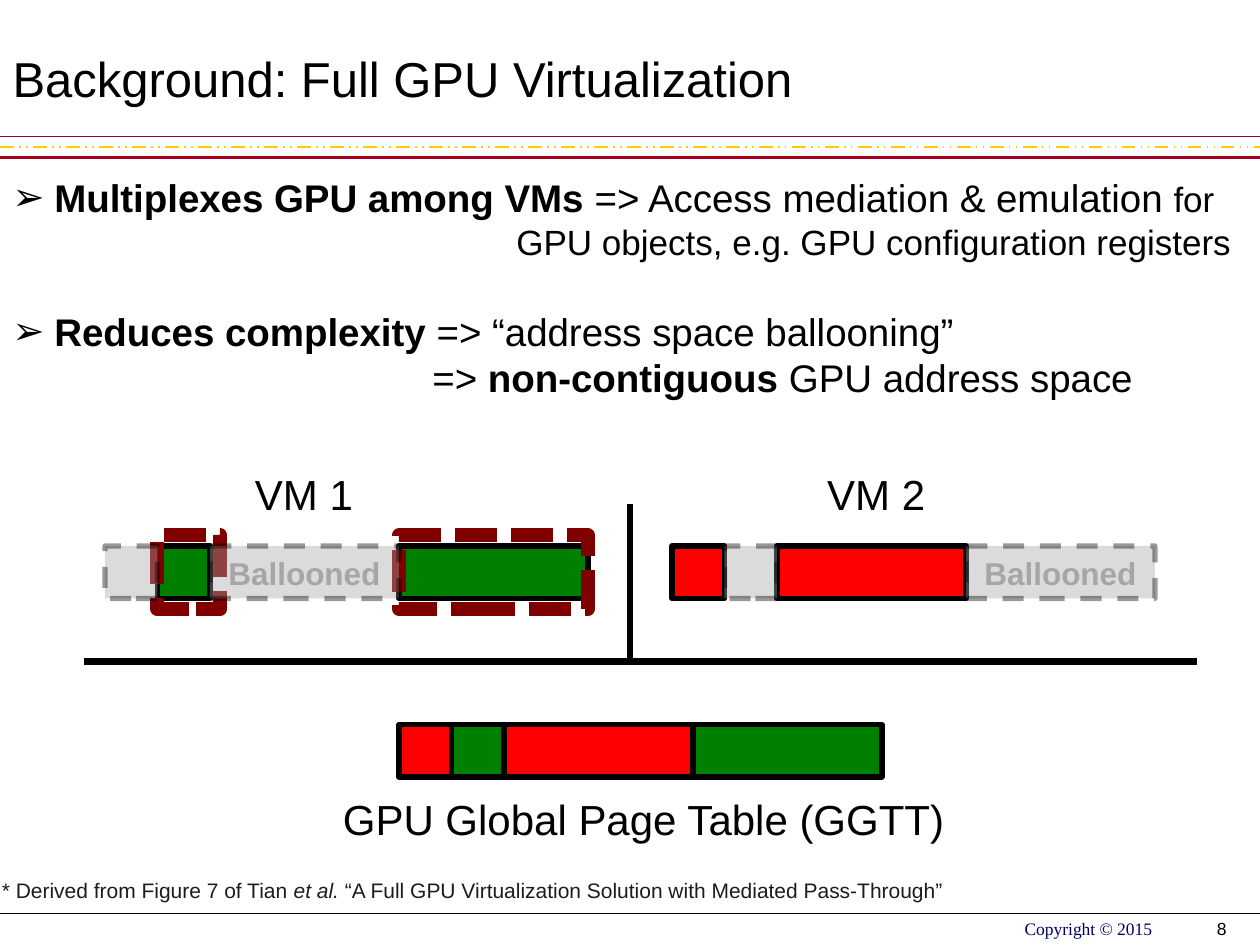
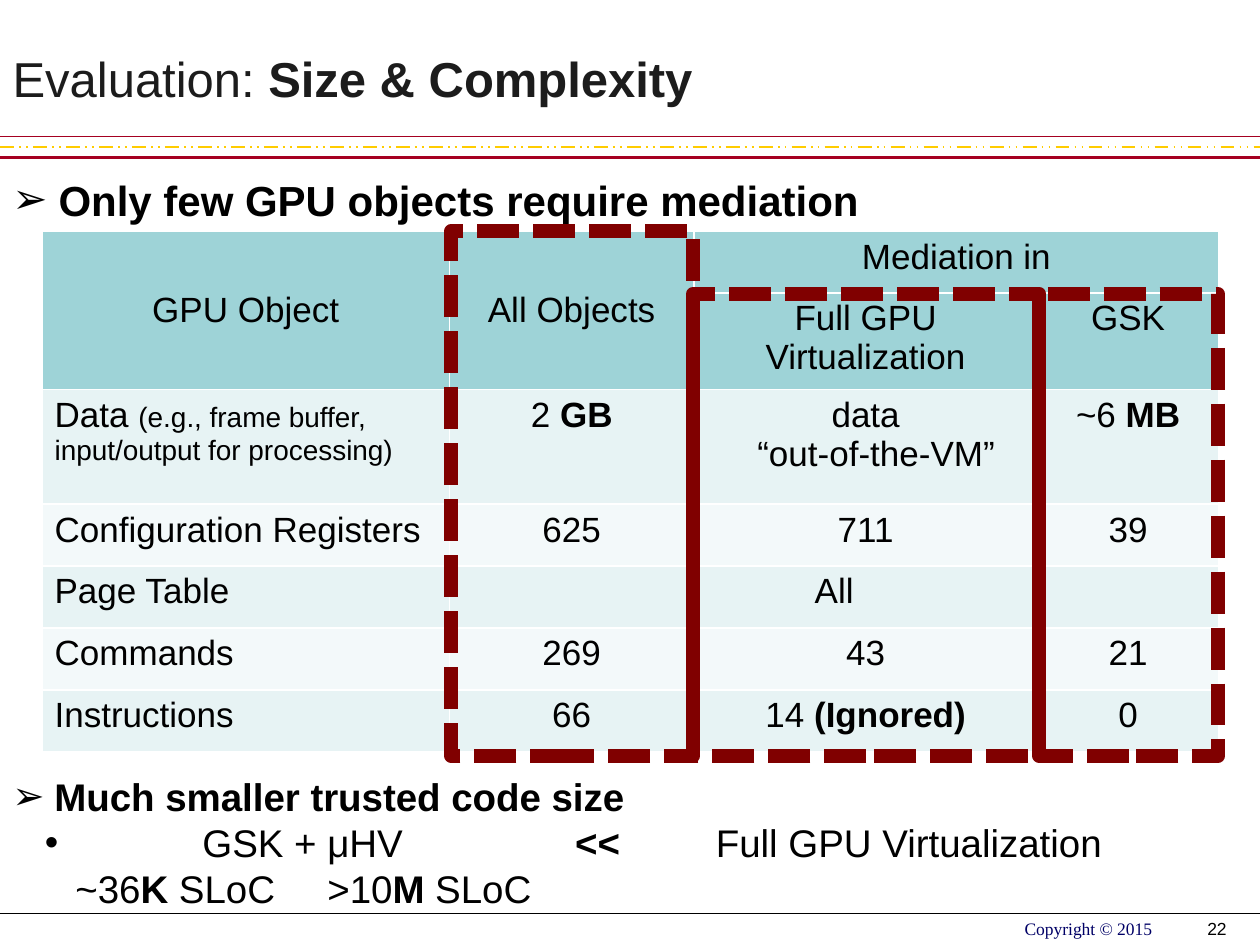
from itertools import accumulate

from lxml.etree import SubElement
from pptx import Presentation
from pptx.dml.color import RGBColor
from pptx.enum.dml import MSO_LINE_DASH_STYLE as Dash
from pptx.enum.shapes import MSO_CONNECTOR as Connector, MSO_SHAPE as Preset
from pptx.enum.text import MSO_ANCHOR as Anchor, MSO_AUTO_SIZE as AutoSize, PP_ALIGN as Align
from pptx.oxml.ns import qn
from pptx.util import Emu, Pt

PX = 7620  # 120 px to the inch
BLACK = RGBColor(0x00, 0x00, 0x00)
WHITE = RGBColor(0xFF, 0xFF, 0xFF)
INK = RGBColor(0x1C, 0x1C, 0x1C)
NAVY = RGBColor(0x00, 0x00, 0x66)
CRIMSON = RGBColor(0xA5, 0x00, 0x21)
GOLD = RGBColor(0xFF, 0xCC, 0x00)
MAROON = RGBColor(0x80, 0x00, 0x00)
RED = RGBColor(0xFF, 0x00, 0x00)
GREEN = RGBColor(0x00, 0x80, 0x00)
GRAY = RGBColor(0xA6, 0xA6, 0xA6)
HEADER = RGBColor(0x9E, 0xD3, 0xD7)
BANDS = RGBColor(0xE7, 0xF3, 0xF4), RGBColor(0xF3, 0xF9, 0xFA)

ARROW = "➢"
BOLD = {"bold": True}
SMALL_BLOCK, LARGE_BLOCK, BLOCK_HEIGHT = 50, 180, 50


def px(*lengths):
    return [Emu(length * PX) for length in lengths]


# Text
def write(frame, runs, size=20, color=BLACK, font="Arial", bold=False, align=Align.LEFT,
          bullet=None, margin=0, indent=0, tabs=(), before=0):
    """Fill the next paragraph; a run is a string or a (string, font settings) pair."""
    paragraph = frame.paragraphs[0]
    if paragraph.runs:
        paragraph = frame.add_paragraph()
    properties = paragraph._p.get_or_add_pPr()
    properties.set("marL", str(margin * PX))
    properties.set("indent", str(indent * PX))
    paragraph.alignment = align
    paragraph.space_before = Pt(before)
    if bullet:
        SubElement(properties, qn("a:buFont"), typeface="Arial")
        SubElement(properties, qn("a:buChar"), char=bullet)
    else:
        SubElement(properties, qn("a:buNone"))
    if tabs:
        stops = SubElement(properties, qn("a:tabLst"))
        for stop in tabs:
            SubElement(stops, qn("a:tab"), pos=str(stop * PX), algn="l")
    for item in [runs] if isinstance(runs, str) else runs:
        text, changes = (item, {}) if isinstance(item, str) else item
        run = paragraph.add_run()
        run.text = text
        run.font.name = font
        run.font.color.rgb = color
        run.font.size = Pt(changes.get("size", size))
        run.font.bold = changes.get("bold", bold)
        run.font.italic = changes.get("italic", False)


def add_text_frame(slide, box):
    frame = slide.shapes.add_textbox(*px(*box)).text_frame
    frame.word_wrap = True
    return frame


def add_label(slide, box, runs, **style):
    write(add_text_frame(slide, box), runs, **style)


# Lines and rectangles
def set_alpha(parent, percent):
    color = next(parent.iter(qn("a:srgbClr")))
    SubElement(color, qn("a:alpha"), val=str(percent * 1000))


def style_line(line, color, width, dash=None):
    line.color.rgb = color
    line.width = Pt(width)
    if dash:
        line.dash_style = dash


def add_line(slide, start, end, color, width, dash=None):
    line = slide.shapes.add_connector(Connector.STRAIGHT, *px(*start, *end))
    style_line(line.line, color, width, dash)
    SubElement(line._element.spPr, qn("a:effectLst"))


def add_rectangle(slide, box, fill=None, line=BLACK, width=3, dash=None, alpha=None):
    shape = slide.shapes.add_shape(Preset.RECTANGLE, *px(*box))
    style_line(shape.line, line, width, dash)
    outline = shape.line._get_or_add_ln()
    SubElement(outline, qn("a:round"))
    if fill is None:
        shape.fill.background()
    else:
        shape.fill.solid()
        shape.fill.fore_color.rgb = fill
    if alpha:
        set_alpha(shape._element.spPr.find(qn("a:solidFill")), alpha)
        set_alpha(outline, alpha)
    shape.shadow.inherit = False
    return shape


def add_highlight(slide, box):
    add_rectangle(slide, box, line=MAROON, width=8, dash=Dash.SQUARE_DOT)


# Shared frame of every slide
def add_framed_slide(presentation, title, number, title_color=BLACK):
    slide = presentation.slides.add_slide(presentation.slide_layouts[5])
    heading = slide.shapes.title
    heading.left, heading.top, heading.width, heading.height = px(0, 40, 1030, 68)
    frame = heading.text_frame
    frame.auto_size = AutoSize.NONE
    frame.vertical_anchor = Anchor.TOP
    write(frame, title, size=28, color=title_color)
    for y, color, width, dash in [(140, GOLD, 1, Dash.DASH_DOT_DOT),
                                  (130, CRIMSON, 0.75, None),
                                  (150, CRIMSON, 2.25, None),
                                  (870, BLACK, 0.5, None)]:
        add_line(slide, (0, y), (1200, y), color, width, dash)
    add_label(slide, (964, 868, 180, 32), "Copyright © 2015",
              size=10, color=NAVY, font="Times New Roman")
    add_label(slide, (900, 868, 280, 32), number, size=10, align=Align.RIGHT)
    return slide


# Memory bars
def add_memory_bar(slide, left, top, blocks):
    """Lay blocks side by side and return the boxes of the gray ones, drawn later."""
    gray_boxes = []
    for color, width in blocks:
        box = (left, top, width, BLOCK_HEIGHT)
        if color == GRAY:
            gray_boxes.append(box)
        else:
            add_rectangle(slide, box, color)
        left += width
    return gray_boxes


def add_ballooned(slide, box):
    shape = add_rectangle(slide, box, GRAY, dash=Dash.DASH, alpha=40)
    if box[2] == LARGE_BLOCK:
        shape.text_frame.word_wrap = True
        shape.text_frame.vertical_anchor = Anchor.BOTTOM
        write(shape.text_frame, "Ballooned", size=18, color=GRAY, bold=True, align=Align.CENTER)


def add_memory_diagram(slide, left, top):
    bar_top = top + 80
    gray_boxes = add_memory_bar(slide, left, bar_top, [
        (GRAY, SMALL_BLOCK), (GREEN, SMALL_BLOCK), (GRAY, LARGE_BLOCK), (GREEN, LARGE_BLOCK)])
    gray_boxes += add_memory_bar(slide, left + 540, bar_top, [
        (RED, SMALL_BLOCK), (GRAY, SMALL_BLOCK), (RED, LARGE_BLOCK), (GRAY, LARGE_BLOCK)])
    add_memory_bar(slide, left + 280, top + 250, [
        (RED, SMALL_BLOCK), (GREEN, SMALL_BLOCK), (RED, LARGE_BLOCK), (GREEN, LARGE_BLOCK)])
    for x, width, text in [(130, 119, "VM 1"), (675, 119, "VM 2")]:
        add_label(slide, (left + x, top, width, 60), text, size=24, align=Align.CENTER)
    add_label(slide, (left + 200, top + 310, 626, 60), "GPU Global Page Table (GGTT)",
              size=24, align=Align.CENTER)
    for x, width in [(50, 60), (280, 180)]:
        add_highlight(slide, (left + x, bar_top - 10, width, 70))
    add_line(slide, (left + 1040, top + 190), (left - 20, top + 190), BLACK, 4)
    add_line(slide, (left + 500, top + 40), (left + 500, top + 190), BLACK, 4)
    for box in gray_boxes:
        add_ballooned(slide, box)


def build_background(presentation):
    slide = add_framed_slide(presentation, "Background: Full GPU Virtualization", "8")
    points = add_text_frame(slide, (0, 160, 1210, 275))
    hanging = {"size": 22, "bullet": ARROW, "margin": 40, "indent": -40}
    write(points, [("Multiplexes GPU among VMs ", BOLD), "=> Access mediation & emulation ",
                   ("for", {"size": 20})], **hanging)
    write(points, "GPU objects, e.g. GPU configuration registers", margin=480)
    write(points, [("Reduces complexity ", BOLD), "=> “address space ballooning”"],
          before=26, **hanging)
    write(points, ["=> ", ("non-contiguous ", BOLD), "GPU address space"], size=22, margin=400)
    add_memory_diagram(slide, 100, 440)
    add_label(slide, (-10, 830, 960, 36),
              ["* Derived from Figure 7 of Tian ", ("et al. ", {"italic": True}),
               "“A Full GPU Virtualization Solution with Mediated Pass-Through”"],
              size=12, color=INK)


# Evaluation table
COLUMNS = 388, 233, 327, 173
ROWS = 59, 92, 109, 59, 59, 59, 59
CELLS = [
    ["GPU Object", "All Objects", "Mediation in", None],
    [None, None, "Full GPU Virtualization", "GSK"],
    [["Data ", ("(e.g., frame buffer, input/output for processing)", {"size": 16})],
     ["2 ", ("GB", BOLD)], "data", ["~6 ", ("MB", BOLD)]],
    ["Configuration Registers", "625", "711", "39"],
    ["Page Table", "All", None, None],
    ["Commands", "269", "43", "21"],
    ["Instructions", "66", ["14 ", ("(Ignored)", BOLD)], "0"],
]
MERGES = [((0, 0), (1, 0)), ((0, 1), (1, 1)), ((0, 2), (0, 3)), ((4, 1), (4, 3))]


def style_cell(cell, fill):
    properties = cell._tc.get_or_add_tcPr()
    for side in ("lnL", "lnR", "lnT", "lnB"):
        border = SubElement(properties, qn(f"a:{side}"), w=str(Pt(1)))
        SubElement(SubElement(border, qn("a:solidFill")), qn("a:srgbClr"), val=str(WHITE))
    cell.fill.solid()
    cell.fill.fore_color.rgb = fill


def add_object_table(slide, left, top):
    table = slide.shapes.add_table(len(ROWS), len(COLUMNS),
                                   *px(left, top, sum(COLUMNS), sum(ROWS))).table
    table.first_row = table.horz_banding = False
    for column, width in zip(table.columns, COLUMNS):
        column.width = Emu(width * PX)
    for row, height in zip(table.rows, ROWS):
        row.height = Emu(height * PX)
    for start, end in MERGES:
        table.cell(*start).merge(table.cell(*end))
    for i, texts in enumerate(CELLS):
        for j, text in enumerate(texts):
            cell = table.cell(i, j)
            style_cell(cell, HEADER if i < 2 else BANDS[i % 2])
            if text:
                is_name = i > 1 and j == 0
                write(cell.text_frame, text, align=Align.LEFT if is_name else Align.CENTER)
    for j in (0, 1):
        table.cell(0, j).vertical_anchor = Anchor.MIDDLE
    write(table.cell(2, 2).text_frame, "“out-of-the-VM”", align=Align.CENTER, margin=20)


def add_column_highlights(slide, left, top, bottom):
    widths = 230, 330, 170
    lefts = accumulate(widths[:-1], initial=left)
    for x, y, width in zip(lefts, (top, top + 60, top + 60), widths):
        add_highlight(slide, (x, y, width, bottom - y))


def build_evaluation(presentation):
    slide = add_framed_slide(presentation, ["Evaluation: ", ("Size & Complexity", BOLD)],
                             "22", INK)
    add_object_table(slide, 40, 220)
    add_label(slide, (0, 160, 1200, 60), "Only few GPU objects require mediation",
              size=24, bold=True, bullet=ARROW, margin=44, indent=-44)
    add_column_highlights(slide, 430, 220, 720)
    sizes = add_text_frame(slide, (0, 730, 1200, 145))
    write(sizes, "Much smaller trusted code size", size=22, bold=True,
          bullet=ARROW, margin=40, indent=-40)
    write(sizes, ["\tGSK + μHV\t", ("<<", BOLD), "\tFull GPU Virtualization"], size=22,
          bullet="•", indent=31, tabs=(181, 536, 670))
    write(sizes, ["\t~36", ("K ", BOLD), "SLoC\t>10", ("M ", BOLD), "SLoC"], size=22,
          tabs=(202, 738))


def main():
    presentation = Presentation()
    presentation.slide_width, presentation.slide_height = px(1200, 900)
    build_background(presentation)
    build_evaluation(presentation)
    presentation.save("out.pptx")


if __name__ == "__main__":
    main()
